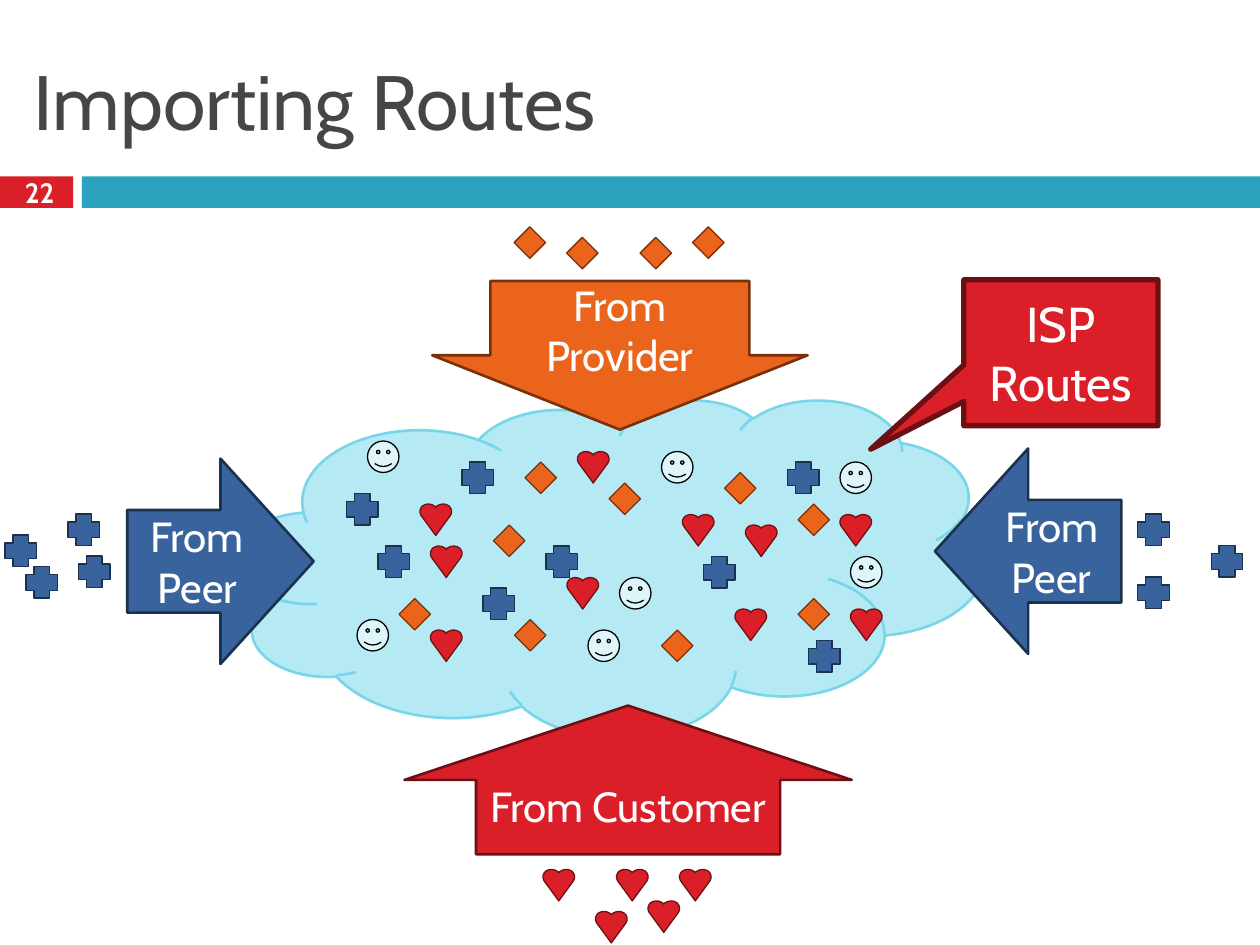
from dataclasses import dataclass

from pptx import Presentation
from pptx.dml.color import RGBColor
from pptx.enum.shapes import MSO_SHAPE as Preset
from pptx.enum.text import MSO_ANCHOR as Anchor, PP_ALIGN as Align
from pptx.util import Inches, Pt


@dataclass(frozen=True)
class Theme:
    font: str = "Cabin"
    white: str = "FFFFFF"
    title: str = "464646"
    teal: str = "2DA2BF"
    red: str = "DA1F28"
    red_line: str = "6D1014"
    orange: str = "EB641B"
    orange_line: str = "78310B"
    blue: str = "39639D"
    blue_line: str = "1C314E"
    cloud: str = "B5E9F4"
    cloud_line: str = "78D6EA"
    smiley: str = "DEF5FA"
    smiley_line: str = "000000"
    title_size: int = 44
    callout_size: int = 28
    label_size: int = 24
    number_size: int = 16


@dataclass(frozen=True)
class Box:
    left: float
    top: float
    width: float
    height: float

    def lengths(self) -> tuple:
        return tuple(Inches(n) for n in (self.left, self.top, self.width, self.height))


@dataclass(frozen=True)
class Style:
    fill: str
    line: str = ""
    weight: float = 0.75


@dataclass(frozen=True)
class Arrow:
    preset: Preset
    box: Box
    style: Style
    label: str
    shaft: float = 0.5


@dataclass(frozen=True)
class RouteGroup:
    """Routes of one kind, placed as (column, row) on a grid from an origin."""
    kind: str
    left: float
    top: float
    cells: tuple


THEME = Theme()
CELL = 1 / 12
ROUTE_SIZE = 3 * CELL

ROUTE_STYLES = {
    "provider": Style(THEME.orange, THEME.orange_line),
    "peer": Style(THEME.blue, THEME.blue_line),
    "isp": Style(THEME.smiley, THEME.smiley_line),
    "customer": Style(THEME.red, THEME.red_line),
}
ROUTE_PRESETS = {"provider": Preset.DIAMOND, "peer": Preset.CROSS, "isp": Preset.SMILEY_FACE}

# Left half of a heart in shares of its size, from the notch to the tip
HEART_HALF = ((0.5, 0.11), (0.47, 0.07), (0.42, 0.04), (0.34, 0.01), (0.25, 0), (0.16, 0.02),
              (0.08, 0.06), (0.03, 0.12), (0, 0.2), (0, 0.28), (0.03, 0.36), (0.5, 1))
HEART = HEART_HALF + tuple((1 - x, y) for x, y in HEART_HALF[-2:0:-1])

CLOUD_ORIGIN = (2.75, 3.5)
ROUTES = (
    # Inside the cloud
    RouteGroup("provider", *CLOUD_ORIGIN, (
        (43, 6), (16, 17), (43, 15), (17, 2), (36, 3), (30, 18), (25, 4), (5, 15), (14, 8))),
    RouteGroup("peer", *CLOUD_ORIGIN, (
        (0, 5), (19, 10), (44, 19), (42, 2), (3, 10), (13, 14), (34, 11), (11, 2))),
    RouteGroup("isp", *CLOUD_ORIGIN, (
        (23, 18), (30, 1), (1, 17), (2, 0), (48, 11), (26, 13), (47, 2))),
    RouteGroup("customer", *CLOUD_ORIGIN, (
        (48, 16), (37, 16), (8, 18), (8, 10), (7, 6), (21, 13), (32, 7), (22, 1),
        (47, 7), (38, 8))),
    # Outside, behind each arrow
    RouteGroup("peer", 9.03, 4.08, ((0, 6), (0, 0), (7, 3))),
    RouteGroup("peer", 0.04, 4.08, ((2, 5), (7, 4), (0, 2), (6, 0))),
    RouteGroup("provider", 4.08, 1.8, ((12, 1), (0, 0), (17, 0), (5, 1))),
    RouteGroup("customer", 4.31, 6.9, ((5, 4), (10, 3), (0, 0), (13, 0), (7, 0))),
)

PROVIDER_ARROW = Style(THEME.orange, THEME.orange_line, 1.5)
PEER_ARROW = Style(THEME.blue, THEME.blue_line, 1.5)
CUSTOMER_ARROW = Style(THEME.red, THEME.red_line, 1.5)
ARROWS = (
    Arrow(Preset.DOWN_ARROW, Box(3.43, 2.23, 2.98, 1.18), PROVIDER_ARROW, "From Provider", 0.69),
    Arrow(Preset.LEFT_ARROW, Box(7.42, 3.56, 1.48, 1.63), PEER_ARROW, "From Peer"),
    Arrow(Preset.RIGHT_ARROW, Box(1.01, 3.64, 1.48, 1.63), PEER_ARROW, "From Peer"),
    Arrow(Preset.UP_ARROW, Box(3.21, 5.6, 3.55, 1.18), CUSTOMER_ARROW, "From Customer", 0.68),
)


def paint(shape, style: Style) -> None:
    shape.shadow.inherit = False
    shape.fill.solid()
    shape.fill.fore_color.rgb = RGBColor.from_string(style.fill)
    if style.line:
        shape.line.color.rgb = RGBColor.from_string(style.line)
        shape.line.width = Pt(style.weight)
    else:
        shape.line.fill.background()


def add_preset(slide, preset: Preset, box: Box, style: Style):
    shape = slide.shapes.add_shape(preset, *box.lengths())
    paint(shape, style)
    return shape


def write(shape, text: str, size: int, color: str = THEME.white,
          align: Align = Align.CENTER, bold: bool = False) -> None:
    frame = shape.text_frame
    frame.word_wrap = True
    frame.vertical_anchor = Anchor.MIDDLE
    frame.text = text
    paragraph = frame.paragraphs[0]
    paragraph.alignment = align
    font = paragraph.runs[0].font
    font.name, font.size, font.bold = THEME.font, Pt(size), bold
    font.color.rgb = RGBColor.from_string(color)


def add_heart(slide, box: Box, style: Style) -> None:
    points = [(Inches(box.left + x * box.width), Inches(box.top + y * box.height))
              for x, y in HEART]
    builder = slide.shapes.build_freeform(*points[0])
    builder.add_line_segments(points[1:], close=True)
    paint(builder.convert_to_shape(), style)


def add_routes(slide, group: RouteGroup) -> None:
    style = ROUTE_STYLES[group.kind]
    for column, row in group.cells:
        box = Box(group.left + column * CELL, group.top + row * CELL, ROUTE_SIZE, ROUTE_SIZE)
        if group.kind == "customer":
            add_heart(slide, box, style)
        else:
            add_preset(slide, ROUTE_PRESETS[group.kind], box, style)


def add_arrow(slide, arrow: Arrow) -> None:
    shape = add_preset(slide, arrow.preset, arrow.box, arrow.style)
    shape.adjustments[0] = arrow.shaft
    write(shape, arrow.label, THEME.label_size)


def main() -> None:
    presentation = Presentation()
    presentation.slide_width, presentation.slide_height = Inches(10), Inches(7.5)
    slide = presentation.slides.add_slide(presentation.slide_layouts[6])

    # Header band, slide number and title
    add_preset(slide, Preset.RECTANGLE, Box(0, 1.4, 0.58, 0.25), Style(THEME.red))
    add_preset(slide, Preset.RECTANGLE, Box(0.65, 1.4, 9.35, 0.25), Style(THEME.teal))
    number = slide.shapes.add_textbox(*Box(-0.01, 1.38, 0.65, 0.29).lengths())
    write(number, "22", THEME.number_size, bold=True)
    title = slide.shapes.add_textbox(*Box(0.17, 0.25, 9.67, 1.08).lengths())
    write(title, "Importing Routes", THEME.title_size, THEME.title, Align.LEFT)

    # Network cloud and the routes in and around it
    add_preset(slide, Preset.CLOUD, Box(1.87, 3.17, 5.95, 2.68),
               Style(THEME.cloud, THEME.cloud_line, 1.5))
    for group in ROUTES:
        add_routes(slide, group)

    # Import arrows
    for arrow in ARROWS:
        add_arrow(slide, arrow)

    # Callout pointing into the cloud
    callout = add_preset(slide, Preset.RECTANGULAR_CALLOUT, Box(7.65, 2.22, 1.54, 1.16),
                         Style(THEME.red, THEME.red_line, 3))
    callout.adjustments[0], callout.adjustments[1] = -0.98, 0.66
    write(callout, "ISP Routes", THEME.callout_size)

    presentation.save("out.pptx")


if __name__ == "__main__":
    main()
